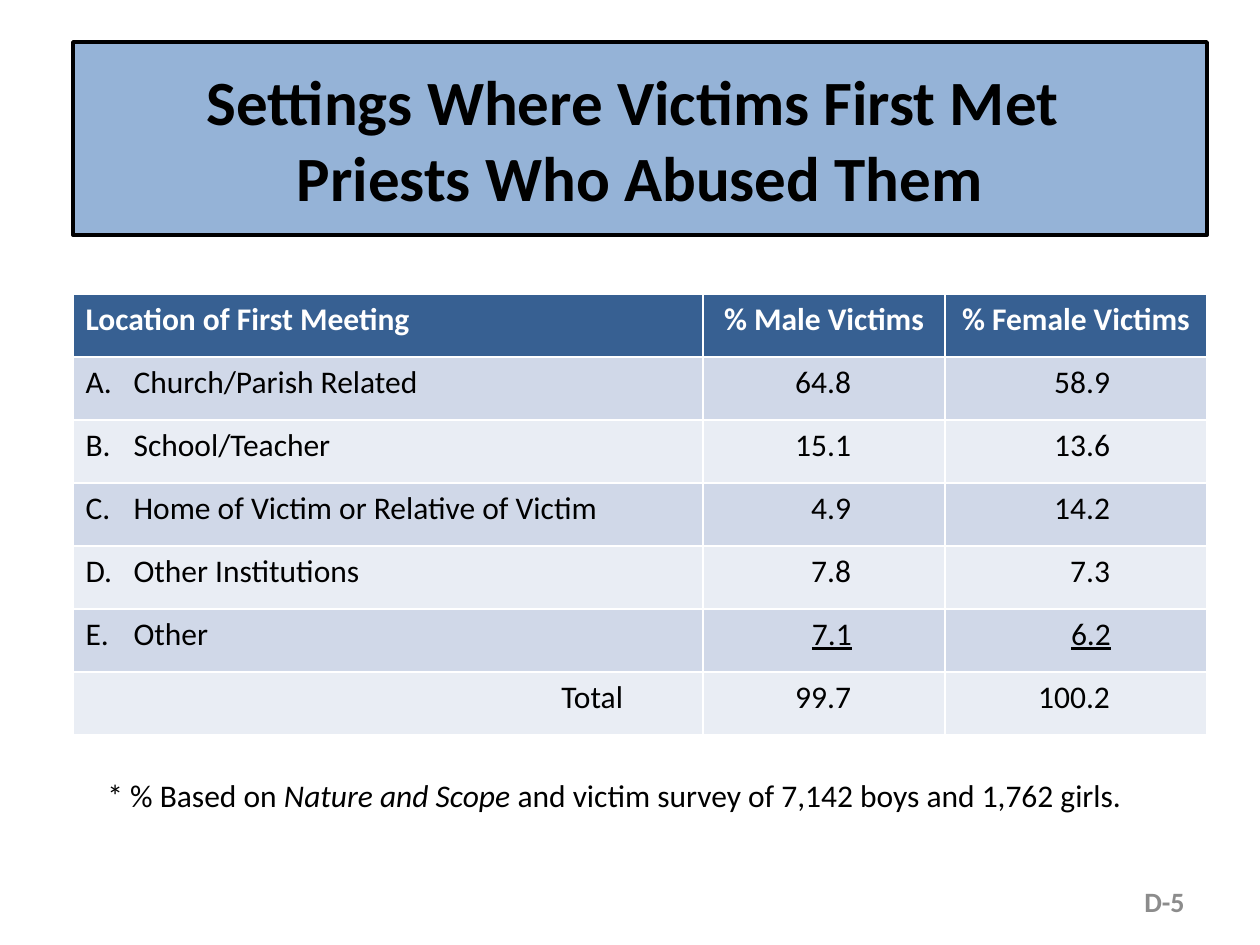
from pptx import Presentation
from pptx.dml.color import RGBColor
from pptx.enum.text import MSO_ANCHOR, PP_ALIGN
from pptx.oxml.ns import qn
from pptx.util import Emu, Pt
from lxml.etree import SubElement

PX = 914400 / 126
BLACK = RGBColor(0x00, 0x00, 0x00)
WHITE = RGBColor(0xFF, 0xFF, 0xFF)
GRAY = RGBColor(0x8C, 0x8C, 0x8C)
TITLE_BLUE = RGBColor(0x95, 0xB3, 0xD7)
HEADER_BLUE = RGBColor(0x37, 0x60, 0x92)
BANDS = [RGBColor(0xE9, 0xED, 0xF4), RGBColor(0xD0, 0xD8, 0xE8)]


def px(n):
    return Emu(round(n * PX))


def style(p, size, color, bold=False, align=PP_ALIGN.LEFT):
    p.alignment = align
    f = p.font
    f.name, f.size, f.bold = "Calibri", Pt(size), bold
    f.color.rgb = color


prs = Presentation()
prs.slide_width, prs.slide_height = px(1260), px(945)
s = prs.slides.add_slide(prs.slide_layouts[5])

# Title
sp = s.shapes.title
sp.left, sp.top, sp.width, sp.height = px(73), px(42), px(1134), px(193)
sp.fill.solid()
sp.fill.fore_color.rgb = TITLE_BLUE
sp.line.color.rgb = BLACK
sp.line.width = Pt(2.25)
tf = sp.text_frame
tf.vertical_anchor = MSO_ANCHOR.MIDDLE
tf.text = "Settings Where Victims First Met \vPriests Who Abused Them"
style(tf.paragraphs[0], 36, BLACK, True, PP_ALIGN.CENTER)

# Table
rows = [
    ("Location of First Meeting", "% Male Victims", "% Female Victims"),
    ("A.\tChurch/Parish Related", "64.8", "58.9"),
    ("B.\tSchool/Teacher", "15.1", "13.6"),
    ("C.\tHome of Victim or Relative of Victim", "4.9", "14.2"),
    ("D.\tOther Institutions", "7.8", "7.3"),
    ("E.\tOther", "\t7.1", "\t6.2"),
    ("Total", "99.7", "100.2"),
]
last = len(rows) - 1
right_margins = [80, 94, 97]
rule_starts = {1: (94, 15), 2: (97, 29)}  # left margin and tab of underlined values

table = s.shapes.add_table(len(rows), 3, px(73), px(294), px(1134), px(441)).table
for col, width in zip(table.columns, [630, 242, 262]):
    col.width = px(width)

for i, row in enumerate(rows):
    for j, text in enumerate(row):
        cell = table.cell(i, j)
        cell.fill.solid()
        cell.fill.fore_color.rgb = BANDS[i % 2] if i else HEADER_BLUE
        cell.text = text
        p = cell.text_frame.paragraphs[0]
        if i == 0:
            style(p, 18, WHITE, True, PP_ALIGN.CENTER if j else PP_ALIGN.LEFT)
        elif text.startswith("\t"):
            # The underlined tab draws the sum line in front of the value
            style(p, 18, BLACK)
            p.font.underline = True
            p.runs[0].font.underline = True
            start, tab = rule_starts[j]
            cell.margin_left, cell.margin_right = px(start), 0
            tabs = SubElement(p._p.get_or_add_pPr(), qn("a:tabLst"))
            SubElement(tabs, qn("a:tab"), pos=str(px(tab)), algn="l")
            p._p.pPr.insert(0, tabs)
        elif j or i == last:
            style(p, 18, BLACK, align=PP_ALIGN.RIGHT)
            cell.margin_right = px(right_margins[j])
        else:
            style(p, 18, BLACK)
            pPr = p._p.get_or_add_pPr()
            pPr.set("marL", str(px(48)))
            pPr.set("indent", str(px(-48)))

# Footnote
tf = s.shapes.add_textbox(px(95), px(770), px(1092), px(50)).text_frame
tf.word_wrap = True
p = tf.paragraphs[0]
style(p, 18, BLACK)
for text, italic in [
    ("* % Based on ", False),
    ("Nature and Scope ", True),
    ("and victim survey of 7,142 boys and 1,762 girls.", False),
]:
    r = p.add_run()
    r.text = text
    r.font.italic = italic

# Page number
tf = s.shapes.add_textbox(px(903), px(876), px(294), px(50)).text_frame
tf.word_wrap = True
tf.vertical_anchor = MSO_ANCHOR.MIDDLE
tf.text = "D-5"
style(tf.paragraphs[0], 16, GRAY, True, PP_ALIGN.RIGHT)

prs.save("out.pptx")
